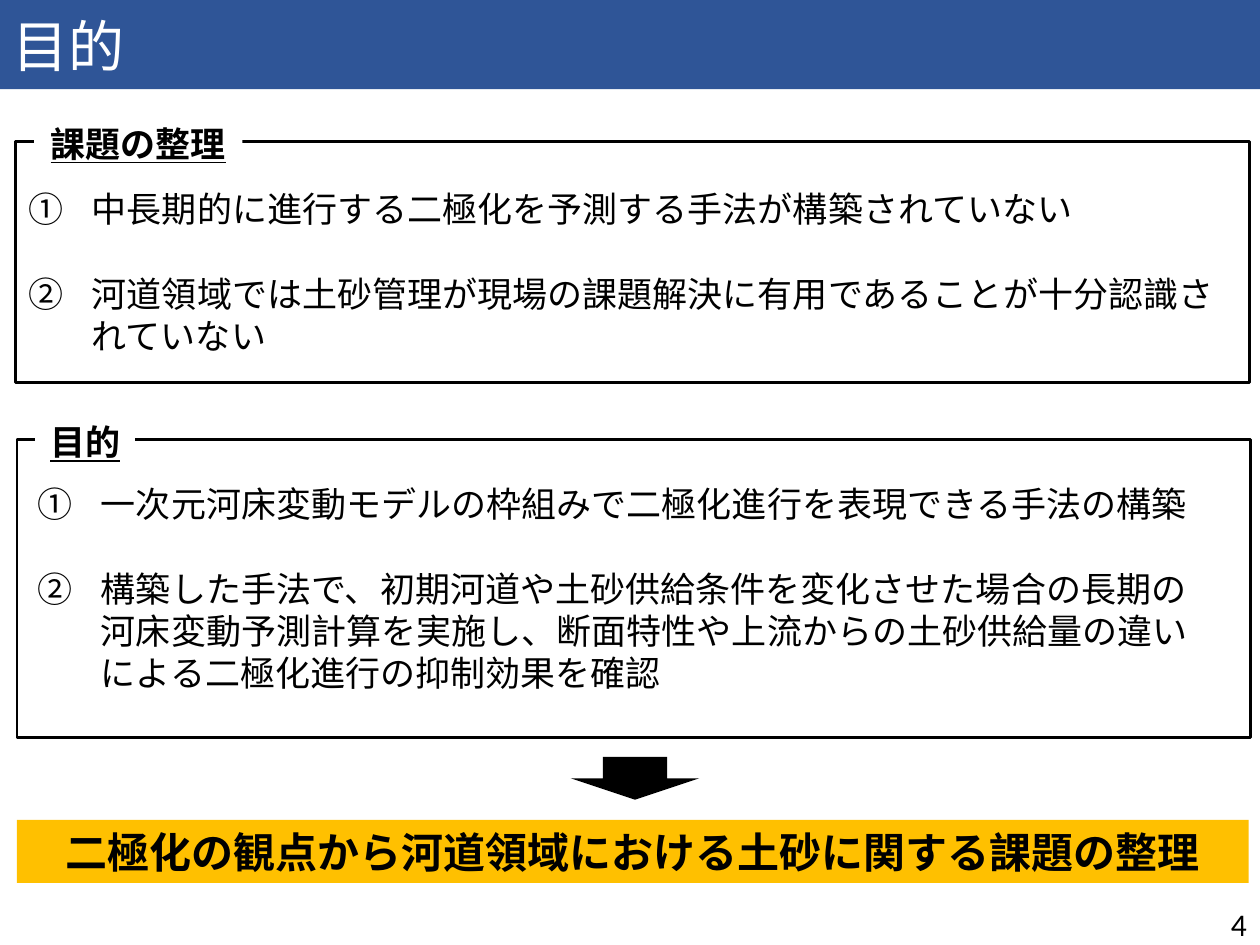
import pptx
import pptx.util
import pptx.dml.color
import pptx.enum.shapes
import pptx.enum.text
from dataclasses import dataclass
from lxml import etree

Pt = pptx.util.Pt
RGB = pptx.dml.color.RGBColor.from_string
SHAPE = pptx.enum.shapes.MSO_SHAPE
ALIGN = pptx.enum.text.PP_ALIGN
ANCHOR = pptx.enum.text.MSO_ANCHOR
A = "http://schemas.openxmlformats.org/drawingml/2006/main"


@dataclass(frozen=True)
class Theme:
    band: str = "2F5597"
    accent: str = "FFC000"
    ink: str = "000000"
    paper: str = "FFFFFF"
    latin: str = "Calibri"
    japanese: str = "Noto Sans CJK JP"
    title: int = 32
    conclusion: int = 24
    body: int = 20
    number: int = 18
    outline: float = 1.5
    item_gap: float = 24.5


T = Theme()


def place(sp, box):
    for name, value in zip(("left", "top", "width", "height"), box):
        setattr(sp, name, Pt(value))


def write(p, text, size, color=T.ink, font=T.japanese, align=ALIGN.LEFT, **styles):
    p.alignment = align
    r = p.add_run()
    r.text = text
    formats = {"size": Pt(size), "name": font, **styles}
    for name, value in formats.items():
        setattr(r.font, name, value)
    r.font.color.rgb = RGB(color)
    ea = etree.SubElement(r.font._element, f"{{{A}}}ea")
    ea.set("typeface", T.japanese)


def add_block(s, kind, box, fill=None, line=None):
    sp = s.shapes.add_shape(kind, *map(Pt, box))
    sp.shadow.inherit = False
    if fill:
        sp.fill.solid()
        sp.fill.fore_color.rgb = RGB(fill)
    else:
        sp.fill.background()
    if line:
        sp.line.color.rgb = RGB(line)
        sp.line.width = Pt(T.outline)
    else:
        sp.line.fill.background()
    return sp


def add_textbox(s, box, anchor=ANCHOR.TOP):
    tf = s.shapes.add_textbox(*map(Pt, box)).text_frame
    tf.word_wrap = True
    tf.vertical_anchor = anchor
    return tf


def add_title(s, box, text):
    sp = s.shapes.title
    place(sp, box)
    sp.fill.solid()
    sp.fill.fore_color.rgb = RGB(T.band)
    sp.text_frame.vertical_anchor = ANCHOR.MIDDLE
    write(sp.text_frame.paragraphs[0], text, T.title, T.paper)


def add_circled_list(s, box, items, font):
    tf = add_textbox(s, box)
    for i, item in enumerate(items):
        p = tf.paragraphs[0] if i == 0 else tf.add_paragraph()
        write(p, item, T.body, font=font)
        if i:
            p.space_before = Pt(T.item_gap)
        pPr = p._p.get_or_add_pPr()
        pPr.set("marL", str(Pt(36)))
        pPr.set("indent", str(-Pt(36)))
        bullet = etree.SubElement(pPr, f"{{{A}}}buAutoNum")
        bullet.set("type", "circleNumDbPlain")


def add_framed_section(s, box, heading, heading_width, items, list_offset, font):
    """Outlined box whose heading interrupts the top edge."""
    left, top, width, height = box
    add_block(s, SHAPE.RECTANGLE, box, line=T.ink)
    dx, dy = list_offset
    add_circled_list(s, (left + dx, top + dy, 701 - 3 * dx, height - 35), items, font)
    label = add_block(s, SHAPE.RECTANGLE, (left + 10.5, top - 14.5, heading_width, 31.5), T.paper)
    label.text_frame.word_wrap = False
    label.text_frame.vertical_anchor = ANCHOR.TOP
    write(label.text_frame.paragraphs[0], heading, T.body, font=T.latin,
          align=ALIGN.CENTER, bold=True, underline=True)


def add_conclusion(s, box, text):
    """Down arrow centred above a highlighted bar."""
    left, top, width, height = box
    add_block(s, SHAPE.DOWN_ARROW, (left + width / 2 - 35.5, top, 73.5, 24.5), T.ink)
    sp = add_block(s, SHAPE.RECTANGLE, (left, top + 36, width, height - 36), T.accent)
    sp.text_frame.vertical_anchor = ANCHOR.MIDDLE
    write(sp.text_frame.paragraphs[0], text, T.conclusion, align=ALIGN.CENTER, bold=True)


def add_page_number(s, box, text):
    tf = add_textbox(s, box, ANCHOR.MIDDLE)
    write(tf.paragraphs[0], text, T.number, font=T.latin, align=ALIGN.RIGHT)


def main():
    prs = pptx.Presentation()
    prs.slide_width, prs.slide_height = Pt(720), Pt(540)
    s = prs.slides.add_slide(prs.slide_layouts[5])
    add_title(s, (0, 0, 720, 51), "目的")
    add_framed_section(
        s, (9, 80.8, 705, 138), "課題の整理", 119,
        ["中長期的に進行する二極化を予測する手法が構築されていない",
         "河道領域では土砂管理が現場の課題解決に有用であることが十分認識されていない"],
        (0.4, 23), T.latin)
    add_framed_section(
        s, (9.6, 251.3, 705, 170), "目的", 57,
        ["一次元河床変動モデルの枠組みで二極化進行を表現できる手法の構築",
         "構築した手法で、初期河道や土砂供給条件を変化させた場合の長期の河床変動予測計算を実施し、"
         "断面特性や上流からの土砂供給量の違いによる二極化進行の抑制効果を確認"],
        (5, 21), T.japanese)
    add_conclusion(s, (9.6, 432.5, 704, 72), "二極化の観点から河道領域における土砂に関する課題の整理")
    add_page_number(s, (551.5, 513.5, 168, 29), "4")
    prs.save("out.pptx")


if __name__ == "__main__":
    main()
